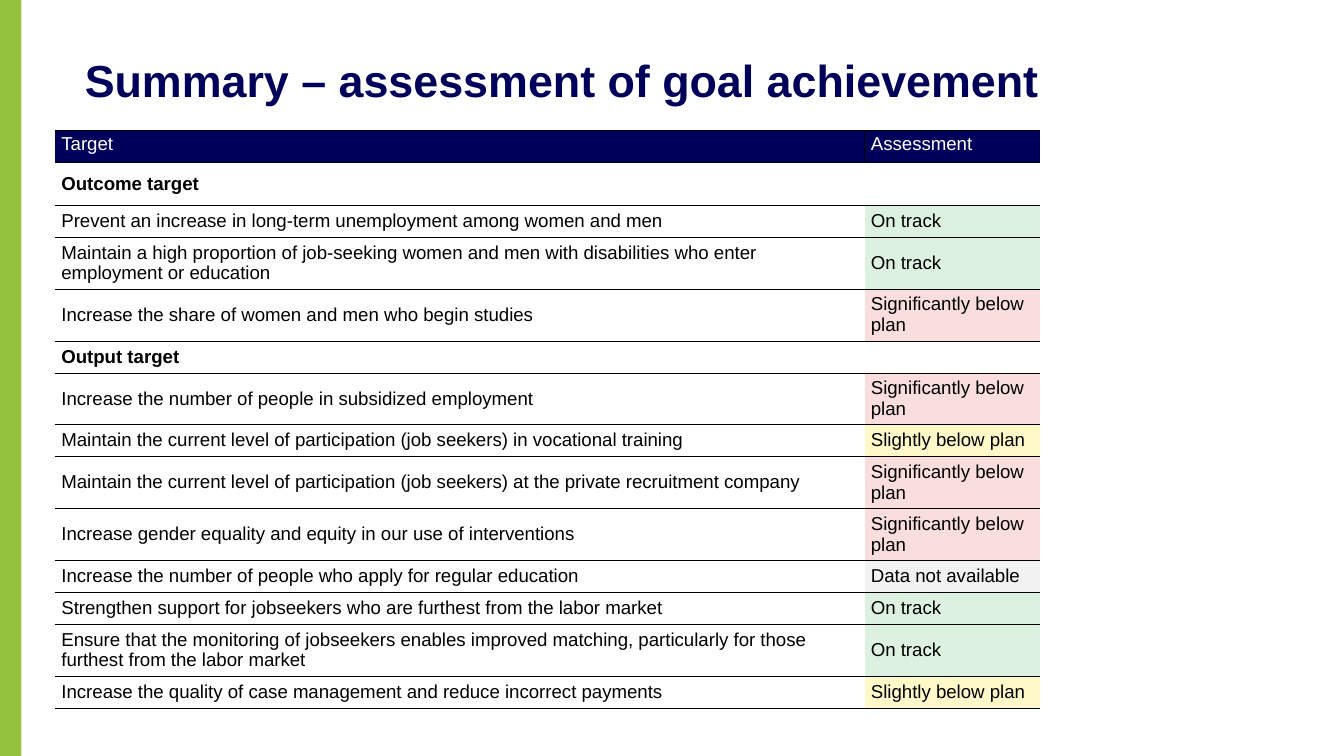
from lxml import etree
from pptx import Presentation
from pptx.dml.color import RGBColor
from pptx.enum.shapes import MSO_SHAPE
from pptx.enum.text import MSO_ANCHOR
from pptx.oxml.ns import qn
from pptx.util import Pt

RECTANGLE = MSO_SHAPE.RECTANGLE
TOP, MIDDLE = MSO_ANCHOR.TOP, MSO_ANCHOR.MIDDLE

NAVY = RGBColor(0x00, 0x00, 0x5A)
LIME = RGBColor(0x95, 0xC2, 0x3D)
BLACK = RGBColor(0x00, 0x00, 0x00)
WHITE = RGBColor(0xFF, 0xFF, 0xFF)
GREEN = RGBColor(0xDD, 0xF1, 0xE1)
RED = RGBColor(0xFA, 0xDD, 0xDD)
YELLOW = RGBColor(0xFF, 0xF9, 0xCA)
GREY = RGBColor(0xF2, 0xF2, 0xF2)

NO_STYLE = "{2D5ABB26-0587-4C30-8999-92F81FD0307C}"
BORDER_WIDTH = Pt(0.25)
SHORT, MEDIUM, TALL = 17.14, 23, 27.8

STATUS_FILLS = {
    "On track": GREEN,
    "Significantly below plan": RED,
    "Slightly below plan": YELLOW,
    "Data not available": GREY,
}
# Height, target and assessment; a section row has no assessment
ROWS = [
    (SHORT, "Target", "Assessment"),
    (MEDIUM, "Outcome target", None),
    (SHORT, "Prevent an increase in long-term unemployment among women and men", "On track"),
    (TALL, "Maintain a high proportion of job-seeking women and men with disabilities "
           "who enter employment or education", "On track"),
    (TALL, "Increase the share of women and men who begin studies", "Significantly below plan"),
    (SHORT, "Output target", None),
    (TALL, "Increase the number of people in subsidized employment", "Significantly below plan"),
    (SHORT, "Maintain the current level of participation (job seekers) in vocational training",
     "Slightly below plan"),
    (TALL, "Maintain the current level of participation (job seekers) at the private "
           "recruitment company", "Significantly below plan"),
    (TALL, "Increase gender equality and equity in our use of interventions",
     "Significantly below plan"),
    (SHORT, "Increase the number of people who apply for regular education",
     "Data not available"),
    (SHORT, "Strengthen support for jobseekers who are furthest from the labor market",
     "On track"),
    (TALL, "Ensure that the monitoring of jobseekers enables improved matching, "
           "particularly for those furthest from the labor market", "On track"),
    (SHORT, "Increase the quality of case management and reduce incorrect payments",
     "Slightly below plan"),
]


def write(para, text, size, color, bold):
    span = para.add_run()
    span.text = text
    span.font.color.rgb = color
    for name, value in {"name": "Arial", "size": Pt(size), "bold": bold}.items():
        setattr(span.font, name, value)


def add_borders(cell, sides):
    """Draw black borders; sides are tags in the order lnL, lnR, lnT, lnB."""
    properties = cell._tc.get_or_add_tcPr()
    for side in sides:
        line = etree.SubElement(properties, qn("a:" + side), w=str(BORDER_WIDTH))
        fill = etree.SubElement(line, qn("a:solidFill"))
        etree.SubElement(fill, qn("a:srgbClr"), val=str(BLACK))


deck = Presentation()
deck.slide_width, deck.slide_height = Pt(720), Pt(405)
page = deck.slides.add_slide(deck.slide_layouts[6])

stripe = page.shapes.add_shape(RECTANGLE, 0, 0, Pt(11.5), Pt(405))
stripe.shadow.inherit = False
stripe.fill.solid()
stripe.fill.fore_color.rgb = LIME
stripe.line.fill.background()

title = page.shapes.add_textbox(Pt(45.4), Pt(25.2), Pt(584.6), Pt(53.3)).text_frame
title_format = {"word_wrap": True, "vertical_anchor": TOP, "margin_left": 0,
                "margin_right": 0, "margin_top": 0, "margin_bottom": 0}
for name, value in title_format.items():
    setattr(title, name, value)
title.paragraphs[0].line_spacing = 1.1
write(title.paragraphs[0], "Summary – assessment of goal achievement", 24, NAVY, True)

total_height = sum(height for height, target, assessment in ROWS)
table = page.shapes.add_table(
    len(ROWS), 2, Pt(29.5), Pt(69.8), Pt(527.7), Pt(total_height)).table
table.first_row = table.horz_banding = False
table._tbl.tblPr.find(qn("a:tableStyleId")).text = NO_STYLE
table.columns[0].width, table.columns[1].width = Pt(433.7), Pt(94)

for row, (height, target, assessment) in enumerate(ROWS):
    table.rows[row].height = Pt(height)
    is_header, is_section = row == 0, assessment is None
    for column, text in enumerate((target, assessment)):
        cell = table.cell(row, column)
        cell_format = {"margin_left": Pt(3.4), "margin_right": Pt(3.4),
                       "margin_top": Pt(1.7), "margin_bottom": Pt(1.7),
                       "vertical_anchor": TOP if is_header else MIDDLE}
        for name, value in cell_format.items():
            setattr(cell, name, value)
        if is_header:
            add_borders(cell, ("lnL" if column else "lnR", "lnT", "lnB"))
        else:
            add_borders(cell, ("lnT", "lnB"))
        fill_color = NAVY if is_header else STATUS_FILLS.get(text)
        if fill_color is None:
            cell.fill.background()
        else:
            cell.fill.solid()
            cell.fill.fore_color.rgb = fill_color
        if text:
            write(cell.text_frame.paragraphs[0], text, 10,
                  WHITE if is_header else BLACK, is_section)
    if is_section:
        table.cell(row, 0).merge(table.cell(row, 1))

deck.save("out.pptx")
